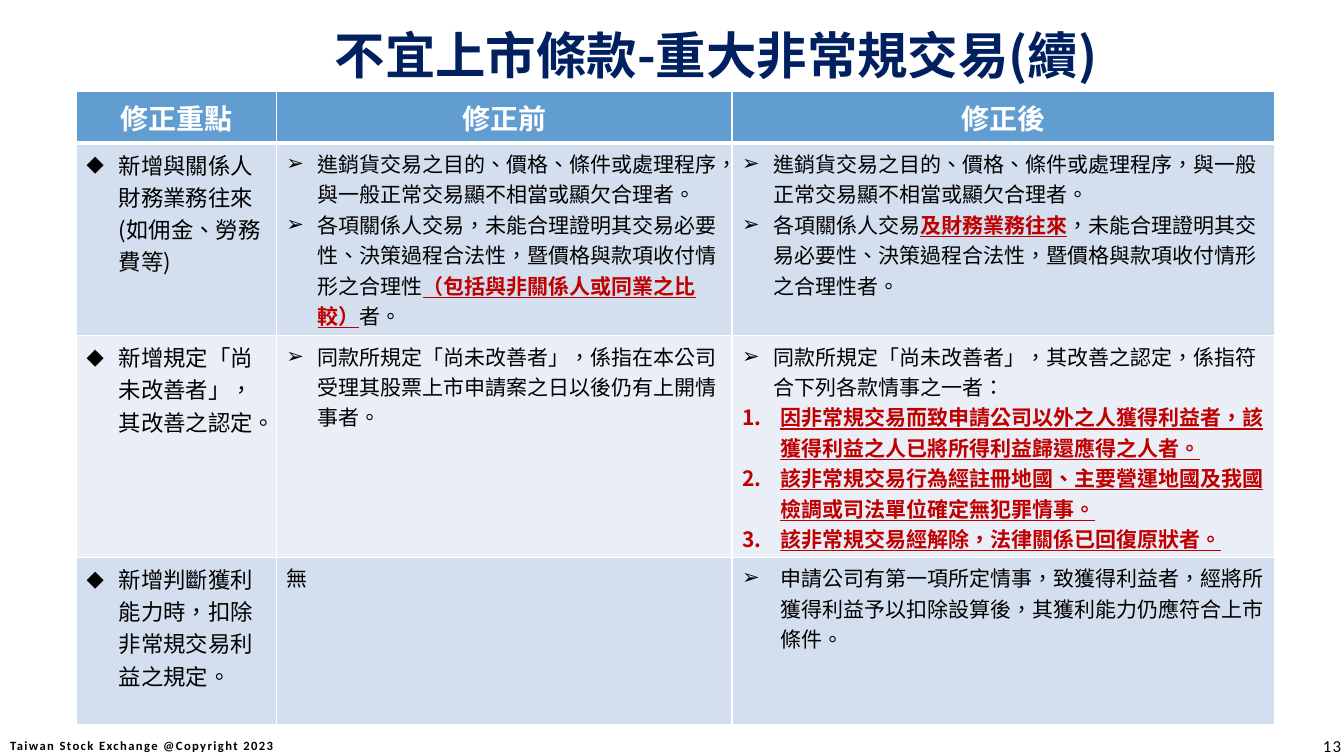
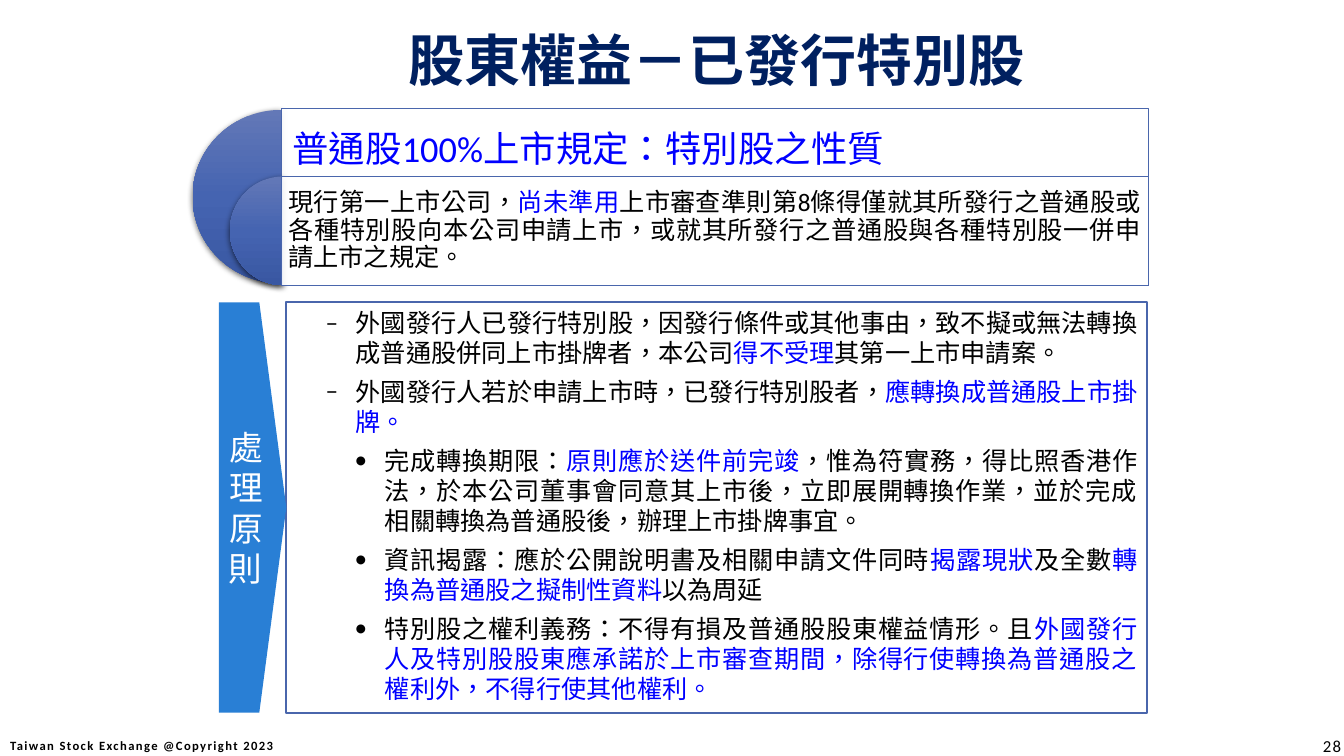
from lxml import etree
from pptx import Presentation
from pptx import util as u
from pptx.dml.color import RGBColor
from pptx.enum import shapes, text
from pptx.oxml import ns

PX = 9144  # 100 px to the inch
COLORS = {
    "navy": "002060", "black": "000000", "white": "FFFFFF", "red": "C00000",
    "blue": "0000FF", "header": "629DD1", "band_dark": "D3DFEE",
    "band_light": "EAEFF7", "frame": "4A66AC", "arrow": "297FD5",
}
PIE_STOPS = [(0, "6378B7"), (50, "4564B1"), (100, "3957A2")]
CJK, LATIN, TITLE_FACE = "Noto Sans CJK SC", "Calibri", "Vollkorn"
ALIGN, ANCHOR, SHAPE = text.PP_ALIGN, text.MSO_ANCHOR, shapes.MSO_SHAPE
RED_MARK = {"color": "red", "bold": True, "underline": True}
BLUE_MARK = {"color": "blue"}
NUMBERED = "1."


def px(*lengths):
    return [u.Emu(length * PX) for length in lengths]


def rgb(name):
    return RGBColor.from_string(COLORS[name])


def add_xml(parent, tag, **attributes):
    return etree.SubElement(parent, ns.qn(tag), attributes)


# Text
def add_span(para, words, size=18, face=CJK, color="black", bold=False,
             underline=False, spacing=0):
    span = para.add_run()
    span.text = words
    font = span.font
    font.size, font.name, font.bold = u.Pt(size), face, bold
    font.underline = underline
    font.color.rgb = rgb(color)
    props = span._r.get_or_add_rPr()
    props.set("lang", "zh-TW")
    if spacing:
        props.set("spc", str(spacing * 100))
    add_xml(props, "a:ea", typeface=CJK)


def set_bullet(para, bullet, indent, hang):
    props = para._p.get_or_add_pPr()
    props.set("marL", str(indent * PX))
    props.set("indent", str(-hang * PX))
    if bullet == NUMBERED:
        add_xml(props, "a:buFont", typeface=CJK)
        add_xml(props, "a:buAutoNum", type="arabicPeriod")
    else:
        add_xml(props, "a:buFont", typeface=LATIN)
        add_xml(props, "a:buChar", char=bullet)


def write(frame, words, align=ALIGN.LEFT, leading=None, before=0, bullet=None,
          indent=0, hang=0, level=0, mark=None, **style):
    """Add one paragraph; the parts between bars take the mark format."""
    first = frame.paragraphs[0]
    para = frame.add_paragraph() if first.runs else first
    para.alignment, para.level = align, level
    if leading:
        para.line_spacing = leading
    if before and para._p is not first._p:
        para.space_before = u.Pt(before)
    if bullet:
        set_bullet(para, bullet, indent, hang)
    for number, part in enumerate(words.split("|")):
        if part:
            add_span(para, part, **{**style, **((mark or {}) if number % 2 else {})})
    return para


def prepare(frame, anchor=ANCHOR.MIDDLE, insets=(10, 5, 10, 5)):
    frame.word_wrap, frame.vertical_anchor = True, anchor
    (frame.margin_left, frame.margin_top,
     frame.margin_right, frame.margin_bottom) = px(*insets)
    return frame


def add_box(page, box, **layout):
    return prepare(page.shapes.add_textbox(*px(*box)).text_frame, **layout)


# Shapes
def add_shape(page, kind, box, fill=None, line=None, width=0.5):
    shape = page.shapes.add_shape(kind, *px(*box))
    shape.shadow.inherit = False
    if fill:
        shape.fill.solid()
        shape.fill.fore_color.rgb = rgb(fill)
    else:
        shape.fill.background()
    if line:
        shape.line.color.rgb = rgb(line)
        shape.line.width = u.Pt(width)
    else:
        shape.line.fill.background()
    return shape


def add_half_disc(page, box):
    disc = add_shape(page, SHAPE.PIE, box)
    disc.adjustments[0], disc.adjustments[1] = 54, 162
    props = disc._element.spPr
    gradient = etree.Element(ns.qn("a:gradFill"), rotWithShape="1")
    stops = add_xml(gradient, "a:gsLst")
    for position, color in PIE_STOPS:
        stop = add_xml(stops, "a:gs", pos=str(position * 1000))
        add_xml(stop, "a:srgbClr", val=color)
    add_xml(gradient, "a:lin", ang="5400000", scaled="0")
    props.replace(props.find(ns.qn("a:noFill")), gradient)
    shadow = add_xml(props.find(ns.qn("a:effectLst")), "a:outerShdw",
                     blurRad=str(u.Pt(4.5)), dist=str(u.Pt(1.5)),
                     dir="5400000", algn="ctr", rotWithShape="0")
    shade = add_xml(shadow, "a:srgbClr", val=COLORS["black"])
    add_xml(shade, "a:alpha", val="63000")


def add_panel(page, box, insets):
    panel = add_shape(page, SHAPE.RECTANGLE, box, "white", "frame")
    color = panel._element.spPr.find(ns.qn("a:solidFill"))[0]
    add_xml(color, "a:alpha", val="90000")
    return prepare(panel.text_frame, insets=insets)


# Parts on every page
def add_page(deck, number, title, title_box, **title_style):
    page = deck.slides.add_slide(deck.slide_layouts[6])
    write(add_box(page, (-14, 720, 309, 40)), "Taiwan Stock Exchange @Copyright 2023",
          align=ALIGN.CENTER, size=9, face=LATIN, bold=True, spacing=1)
    write(add_box(page, (1281, 720, 59, 40)), str(number),
          align=ALIGN.RIGHT, size=12, face=LATIN, spacing=1)
    write(add_box(page, title_box), title, align=ALIGN.CENTER,
          color="navy", bold=True, **title_style)
    return page


# Comparison table
def style_cell(cell, fill, bottom=1):
    props = cell._tc.get_or_add_tcPr()
    for side, width in (("L", 1), ("R", 1), ("T", 1), ("B", bottom)):
        line = add_xml(props, "a:ln" + side, w=str(u.Pt(width)))
        add_xml(add_xml(line, "a:solidFill"), "a:srgbClr", val=COLORS["white"])
    cell.fill.solid()
    cell.fill.fore_color.rgb = rgb(fill)
    return cell.text_frame


def add_comparison(page, box, widths, heights, headings, rows):
    table = page.shapes.add_table(len(heights), len(widths), *px(*box)).table
    table.horz_banding = False
    for column, width in zip(table.columns, px(*widths)):
        column.width = width
    for row, height in zip(table.rows, px(*heights)):
        row.height = height
    for column, heading in enumerate(headings):
        frame = style_cell(table.cell(0, column), "header", bottom=3)
        write(frame, heading, align=ALIGN.CENTER, size=20, color="white", bold=True)
    for number, row in enumerate(rows, 1):
        for column, items in enumerate(row):
            frame = style_cell(table.cell(number, column),
                               "band_dark" if number % 2 else "band_light")
            for bullet, indent, words in items:
                write(frame, words, bullet=bullet, indent=indent, hang=indent,
                      size=15 if column else 16, mark=RED_MARK)


def build_transactions(deck):
    page = add_page(deck, 13, "不宜上市條款-重大非常規交易(續)", (149, 9, 1122, 90), size=36)
    rows = [
        [[("◆", 32, "新增與關係人財務業務往來(如佣金、勞務費等)")],
         [("➢", 31, "進銷貨交易之目的、價格、條件或處理程序，與一般正常交易顯不相當或顯欠合理者。"),
          ("➢", 31, "各項關係人交易，未能合理證明其交易必要性、決策過程合法性，暨價格與款項收付情形之合理性"
                    "|（包括與非關係人或同業之比較）|者。")],
         [("➢", 31, "進銷貨交易之目的、價格、條件或處理程序，與一般正常交易顯不相當或顯欠合理者。"),
          ("➢", 31, "各項關係人交易|及財務業務往來|，未能合理證明其交易必要性、決策過程合法性，"
                    "暨價格與款項收付情形之合理性者。")]],
        [[("◆", 32, "新增規定「尚未改善者」，其改善之認定。")],
         [("➢", 31, "同款所規定「尚未改善者」，係指在本公司受理其股票上市申請案之日以後仍有上開情事者。")],
         [("➢", 31, "同款所規定「尚未改善者」，其改善之認定，係指符合下列各款情事之一者："),
          (NUMBERED, 38, "|因非常規交易而致申請公司以外之人獲得利益者，該獲得利益之人已將所得利益歸還應得之人者。"),
          (NUMBERED, 38, "|該非常規交易行為經註冊地國、主要營運地國及我國檢調或司法單位確定無犯罪情事。"),
          (NUMBERED, 38, "|該非常規交易經解除，法律關係已回復原狀者。")]],
        [[("◆", 32, "新增判斷獲利能力時，扣除非常規交易利益之規定。")],
         [(None, 0, "無")],
         [("➢", 38, "申請公司有第一項所定情事，致獲得利益者，經將所獲得利益予以扣除設算後，"
                    "其獲利能力仍應符合上市條件。")]],
    ]
    add_comparison(page, (76, 91, 1188, 628), (198, 452, 538), (51, 191, 220, 166),
                   ("修正重點", "修正前", "修正後"), rows)


# Rule summary with half discs
def add_rule_summary(page, box, heading, body):
    left, top, width, height = box
    split = 67
    add_half_disc(page, (left - 88, top + 1, 175, 172))
    frame = add_panel(page, (left, top, width, height), (11, 11, 11, height - 83 + 11))
    write(frame, heading, size=26, face=LATIN, color="blue", leading=0.9)
    add_half_disc(page, (left - 51, top + split, 106, 108))
    frame = add_panel(page, (left, top + split, width, height - split), (7, 7, 7, 7))
    write(frame, body, align=ALIGN.JUSTIFY, face=LATIN, leading=0.9, mark=BLUE_MARK)


# Handling principles with arrow label
def add_principles(page, box, label, items):
    left, top, width, height = box
    panel = add_shape(page, SHAPE.RECTANGLE, box, line="frame", width=1.5)
    frame = prepare(panel.text_frame, ANCHOR.TOP)
    for level, words in items:
        write(frame, words, align=ALIGN.JUSTIFY, before=6, level=level,
              bullet="–" if level == 1 else "•", indent=30 + 29 * level, hang=30,
              mark=BLUE_MARK)
    arrow = add_shape(page, SHAPE.PENTAGON, (left - 67, top, 67, height), "arrow")
    arrow.adjustments[0] = 0.4
    write(prepare(arrow.text_frame), label, align=ALIGN.CENTER, size=24, color="white")


def build_preferred_shares(deck):
    page = add_page(deck, 28, "股東權益|－|已發行特別股", (203, 27, 1015, 63),
                    size=40, face=TITLE_FACE, mark={"face": CJK})
    add_rule_summary(
        page, (279, 108, 860, 175), "普通股100%上市規定：特別股之性質",
        "現行第一上市公司，|尚未準用|上市審查準則第8條得僅就其所發行之普通股或各種特別股向本公司申請上市，"
        "或就其所發行之普通股與各種特別股一併申請上市之規定。")
    add_principles(page, (284, 300, 854, 407), "處理原則", [
        (1, "外國發行人已發行特別股，因發行條件或其他事由，致不擬或無法轉換成普通股併同上市掛牌者，"
            "本公司|得不受理|其第一上市申請案。"),
        (1, "外國發行人若於申請上市時，已發行特別股者，|應轉換成普通股上市掛牌。"),
        (2, "完成轉換期限：|原則應於送件前完竣|，惟為符實務，得比照香港作法，於本公司董事會同意其上市後，"
            "立即展開轉換作業，並於完成相關轉換為普通股後，辦理上市掛牌事宜。"),
        (2, "資訊揭露：應於公開說明書及相關申請文件同時|揭露現狀|及全數|轉換為普通股之擬制性資料|以為周延"),
        (2, "特別股之權利義務：不得有損及普通股股東權益情形。且|外國發行人及特別股股東應承諾於上市審查期間，"
            "除得行使轉換為普通股之權利外，不得行使其他權利。"),
    ])


def main():
    deck = Presentation()
    deck.slide_width, deck.slide_height = px(1333, 750)
    build_transactions(deck)
    build_preferred_shares(deck)
    deck.save("out.pptx")


if __name__ == "__main__":
    main()
